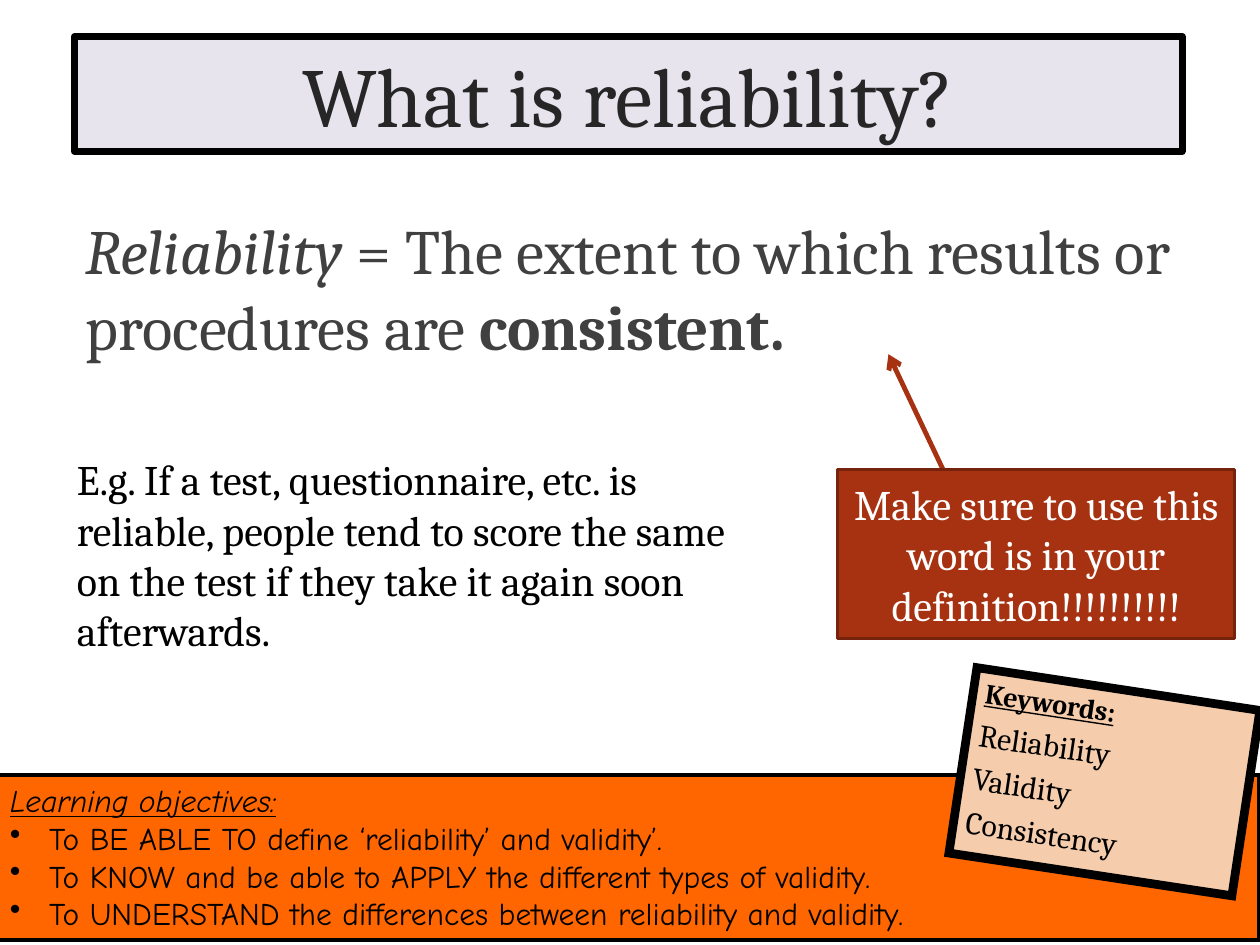
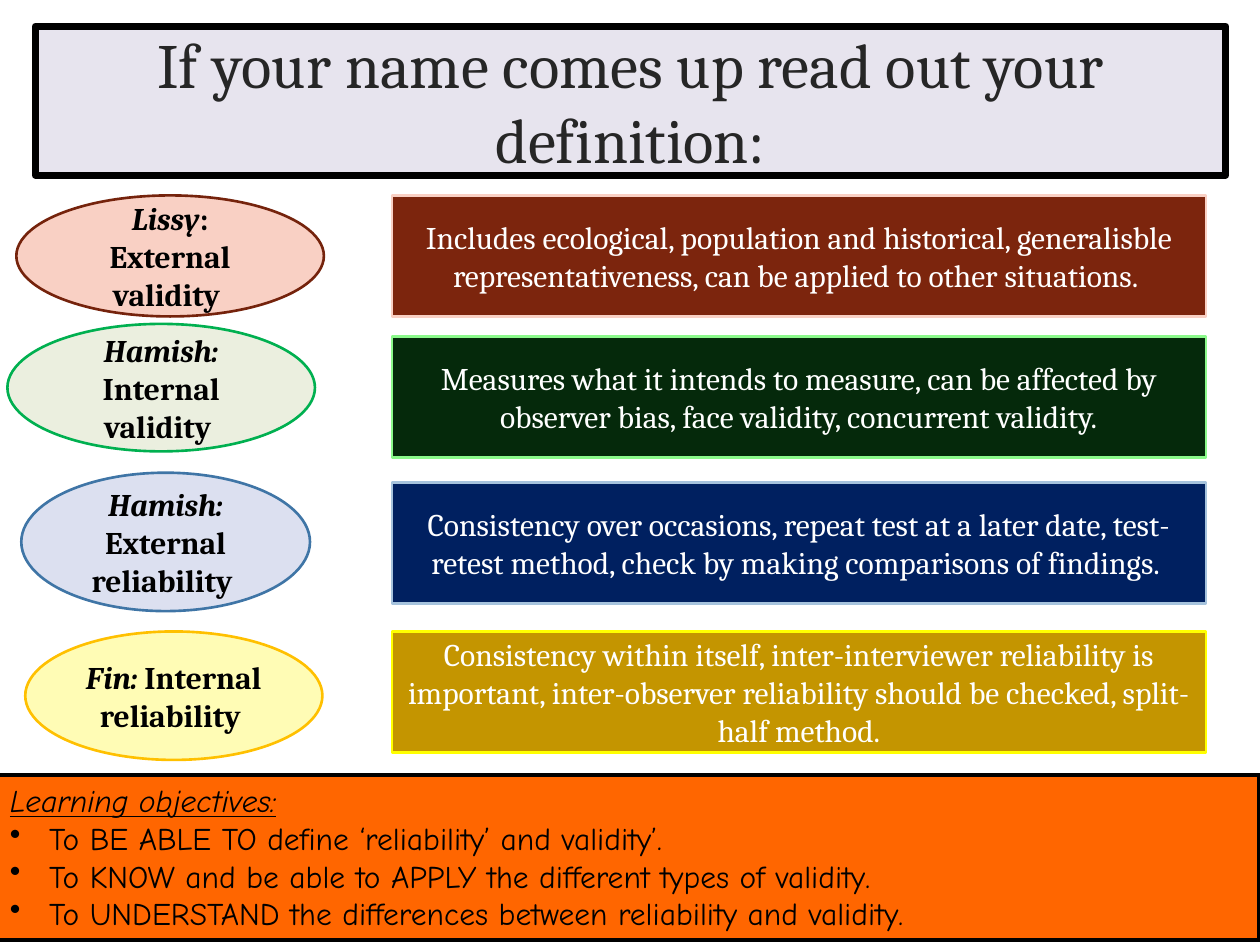
"""Build two lesson slides about reliability and validity."""
from dataclasses import dataclass

from lxml import etree
from pptx import Presentation
from pptx.dml.color import RGBColor
from pptx.enum.shapes import MSO_CONNECTOR, MSO_SHAPE
from pptx.enum.text import MSO_ANCHOR, MSO_AUTO_SIZE, PP_ALIGN
from pptx.oxml.ns import qn
from pptx.util import Cm, Pt

RECTANGLE, ELLIPSE = MSO_SHAPE.RECTANGLE, MSO_SHAPE.OVAL
STRAIGHT = MSO_CONNECTOR.STRAIGHT
TOP, MIDDLE = MSO_ANCHOR.TOP, MSO_ANCHOR.MIDDLE
LEFT, CENTER = PP_ALIGN.LEFT, PP_ALIGN.CENTER
NO_FIT = MSO_AUTO_SIZE.NONE
TITLE_AND_CONTENT, TITLE_ONLY = 1, 5


@dataclass(frozen=True)
class Theme:
    """Fonts, type sizes and colours shared by the slides."""
    serif: str = "Cambria"
    hand: str = "Comic Neue"
    title: int = 48
    large: int = 36
    medium: int = 24
    small: int = 18
    label: int = 16
    black: str = "000000"
    white: str = "FFFFFF"
    title_ink: str = "262626"
    body_ink: str = "404040"
    title_fill: str = "E7E4EE"
    rust: str = "A63212"
    dark_rust: str = "75230C"
    footer: str = "FF6600"
    keyword: str = "F5CDAC"


THEME = Theme()


@dataclass(frozen=True)
class Box:
    """A rectangle measured in centimetres."""
    left: float
    top: float
    width: float
    height: float

    def inner(self, left, top, width, height):
        """Return a box offset from this one's top left corner."""
        return Box(self.left + left, self.top + top, width, height)

    def lengths(self):
        """Return left, top, width and height as lengths."""
        return [Cm(value) for value in (self.left, self.top, self.width, self.height)]


@dataclass(frozen=True)
class Match:
    """A pupil's term, its definition and the colours of both."""
    name: str
    term: str
    definition: str
    top: float
    bubble: Box
    bubble_colours: tuple
    bar_colours: tuple


TITLE_BOX = Box(1.5, 0.74, 22.33, 2.31)
WIDE_TITLE_BOX = Box(0.71, 0.53, 24, 3)
DEFINITION_BOX = Box(1.3, 4.14, 23.59, 9.25)
KEYWORD_BOX = Box(19.38, 13.87, 5.77, 3.78)
FOOTER_BOX = Box(-0.05, 15.62, 25.43, 3.33)
ROW_WIDTH, ROW_HEIGHT = 24.31, 2.44
BAR_LEFT = 7.9

OBJECTIVES = (
    "To BE ABLE TO define ‘reliability’ and validity’.",
    "To KNOW and be able to APPLY the different types of validity.",
    "To UNDERSTAND the differences between reliability and validity.",
)
KEYWORDS = ("Reliability", "Validity", "Consistency")
MATCHES = (
    Match("Lissy", ": External validity ",
          "Includes ecological, population and historical, generalisble "
          "representativeness, can be applied to other situations. ",
          3.94, Box(0.33, 0, 6.2, 2.44), ("F9D0C4", "75230C"), ("7C250D", "F9D0C4")),
    Match("Hamish: ", "Internal validity ",
          "Measures what it intends to measure, can be affected by observer bias, "
          "face validity, concurrent validity.",
          6.78, Box(0.15, -0.25, 6.2, 2.57), ("EBEFDF", "00B050"), ("05290B", "8BF98B")),
    Match("Hamish: ", "External reliability ",
          "Consistency over occasions, repeat test at a later date, test-retest method, "
          "check by making comparisons of findings. ",
          9.73, Box(0.43, -0.2, 5.82, 2.79), ("DCE0F0", "3F75A6"), ("002060", "A6C3DD")),
    Match("Fin: ", "Internal reliability ",
          "Consistency within itself, inter-interviewer reliability is important, "
          "inter-observer reliability should be checked, split-half method.",
          12.73, Box(0.51, 0, 5.99, 2.59), ("FFFCB5", "FFC000"), ("C49500", "FFFF00")),
)


def add_span(para, text, size, colour=THEME.black, name=THEME.serif, **formats):
    """Add a formatted run to a paragraph."""
    span = para.add_run()
    span.text = text
    values = {"name": name, "size": Pt(size), "bold": False, "italic": False, **formats}
    for attribute, value in values.items():
        setattr(span.font, attribute, value)
    span.font.color.rgb = RGBColor.from_string(colour)


def set_frame(shape, anchor=TOP, align=LEFT):
    """Prepare a text frame and return its first paragraph."""
    frame = shape.text_frame
    values = {"word_wrap": True, "auto_size": NO_FIT, "vertical_anchor": anchor}
    for attribute, value in values.items():
        setattr(frame, attribute, value)
    para = frame.paragraphs[0]
    para.alignment = align
    return para


def add_paragraph(shape):
    """Append a left-aligned paragraph to a shape."""
    para = shape.text_frame.add_paragraph()
    para.alignment = LEFT
    return para


def set_bullet(para, character=None, indent=0):
    """Give a paragraph a hanging bullet, or none at all."""
    properties = para._p.get_or_add_pPr()
    properties.set("marL", str(Cm(indent)))
    properties.set("indent", str(-Cm(indent)))
    if character:
        etree.SubElement(properties, qn("a:buChar")).set("char", character)
    else:
        etree.SubElement(properties, qn("a:buNone"))


def paint(shape, fill, line, width):
    """Set a solid fill and outline."""
    shape.fill.solid()
    shape.fill.fore_color.rgb = RGBColor.from_string(fill)
    shape.line.color.rgb = RGBColor.from_string(line)
    shape.line.width = Pt(width)


def add_panel(page, kind, box, fill, line, width):
    """Add a flat preset shape."""
    shape = page.shapes.add_shape(kind, *box.lengths())
    shape.shadow.inherit = False
    paint(shape, fill, line, width)
    return shape


def square_corners(shape):
    """Give an outline mitred corners."""
    outline = shape.line._get_or_add_ln()
    etree.SubElement(outline, qn("a:miter")).set("lim", "800000")


def move(shape, box):
    """Place an existing shape in a box."""
    for attribute, value in zip(("left", "top", "width", "height"), box.lengths()):
        setattr(shape, attribute, value)


def add_title(page, box, text, size):
    """Fill the framed title placeholder."""
    title = page.shapes.title
    move(title, box)
    paint(title, THEME.title_fill, THEME.black, 4)
    add_span(set_frame(title, MIDDLE, CENTER), text, size, THEME.title_ink)


def add_footer(page, box):
    """Add the band of learning objectives."""
    band = add_panel(page, RECTANGLE, box, THEME.footer, THEME.black, 2)
    square_corners(band)
    style = {"size": THEME.small, "name": THEME.hand}
    add_span(set_frame(band), "Learning objectives:", italic=True, underline=True, **style)
    for objective in OBJECTIVES:
        para = add_paragraph(band)
        set_bullet(para, "•", 0.79)
        add_span(para, objective, **style)


def add_arrow(page, start, end):
    """Draw an arrow between two points in centimetres."""
    arrow = page.shapes.add_connector(STRAIGHT, *map(Cm, (*start, *end)))
    arrow.line.color.rgb = RGBColor.from_string(THEME.rust)
    arrow.line.width = Pt(2.75)
    etree.SubElement(arrow.line._get_or_add_ln(), qn("a:tailEnd")).set("type", "arrow")
    etree.SubElement(arrow._element.spPr, qn("a:effectLst"))


def add_definition(page, box):
    """Add the definition and its pointing callout."""
    body = page.placeholders[1]
    move(body, box.inner(0.17, 0, 22.4, 3.78))
    para = set_frame(body)
    para.space_before = Pt(0)
    set_bullet(para)
    style = {"size": THEME.large, "colour": THEME.body_ink}
    add_span(para, "Reliability", italic=True, **style)
    add_span(para, " = The extent to which results or procedures are ", **style)
    add_span(para, "consistent.", bold=True, **style)

    add_arrow(page, (box.left + 18.21, box.top + 6.38), (box.left + 16.61, box.top + 3))
    callout = add_panel(page, RECTANGLE, box.inner(15.59, 5.33, 8, 3.4),
                        THEME.rust, THEME.dark_rust, 1.5)
    add_span(set_frame(callout, MIDDLE, CENTER),
             "Make sure to use this word is in your definition!!!!!!!!!!",
             THEME.medium, THEME.white)


def add_example(page, box):
    """Add the example under the definition."""
    example = page.shapes.add_textbox(*box.inner(0, 4.88, 14.4, 4.37).lengths())
    add_span(set_frame(example),
             "E.g. If a test, questionnaire, etc. is reliable, people tend to score the same "
             "on the test if they take it again soon afterwards.", THEME.medium)


def add_keywords(page, box):
    """Add the tilted keyword card."""
    card = add_panel(page, RECTANGLE, box, THEME.keyword, THEME.black, 5)
    square_corners(card)
    card.rotation = 8.6
    add_span(set_frame(card), "Keywords:", THEME.label, bold=True, underline=True)
    for keyword in KEYWORDS:
        para = add_paragraph(card)
        para.space_before = Pt(0.2 * THEME.small)
        add_span(para, keyword, THEME.small)


def add_match(page, box, match):
    """Add a term bubble beside its definition bar."""
    place = match.bubble
    bubble = add_panel(page, ELLIPSE,
                       box.inner(place.left, place.top, place.width, place.height),
                       *match.bubble_colours, 1.5)
    para = set_frame(bubble, MIDDLE, CENTER)
    add_span(para, match.name, THEME.small, bold=True, italic=True)
    add_span(para, match.term, THEME.small, bold=True)
    bar = add_panel(page, RECTANGLE,
                    box.inner(BAR_LEFT, 0, box.width - BAR_LEFT, box.height),
                    *match.bar_colours, 1.5)
    add_span(set_frame(bar, MIDDLE, CENTER), match.definition, THEME.small, THEME.white)


def build_reliability(deck):
    """Build the slide that defines reliability."""
    page = deck.slides.add_slide(deck.slide_layouts[TITLE_AND_CONTENT])
    add_title(page, TITLE_BOX, "What is reliability?", THEME.title)
    add_definition(page, DEFINITION_BOX)
    add_footer(page, FOOTER_BOX)
    add_example(page, DEFINITION_BOX)
    add_keywords(page, KEYWORD_BOX)


def build_matches(deck):
    """Build the slide that pairs terms with definitions."""
    page = deck.slides.add_slide(deck.slide_layouts[TITLE_ONLY])
    add_title(page, WIDE_TITLE_BOX, "If your name comes up read out your definition:",
              THEME.large)
    add_footer(page, FOOTER_BOX)
    for match in MATCHES:
        add_match(page, Box(0, match.top, ROW_WIDTH, ROW_HEIGHT), match)


def main():
    """Create and save the deck."""
    deck = Presentation()
    deck.slide_width, deck.slide_height = Cm(25.4), Cm(19.05)
    build_reliability(deck)
    build_matches(deck)
    deck.save("out.pptx")


if __name__ == "__main__":
    main()
